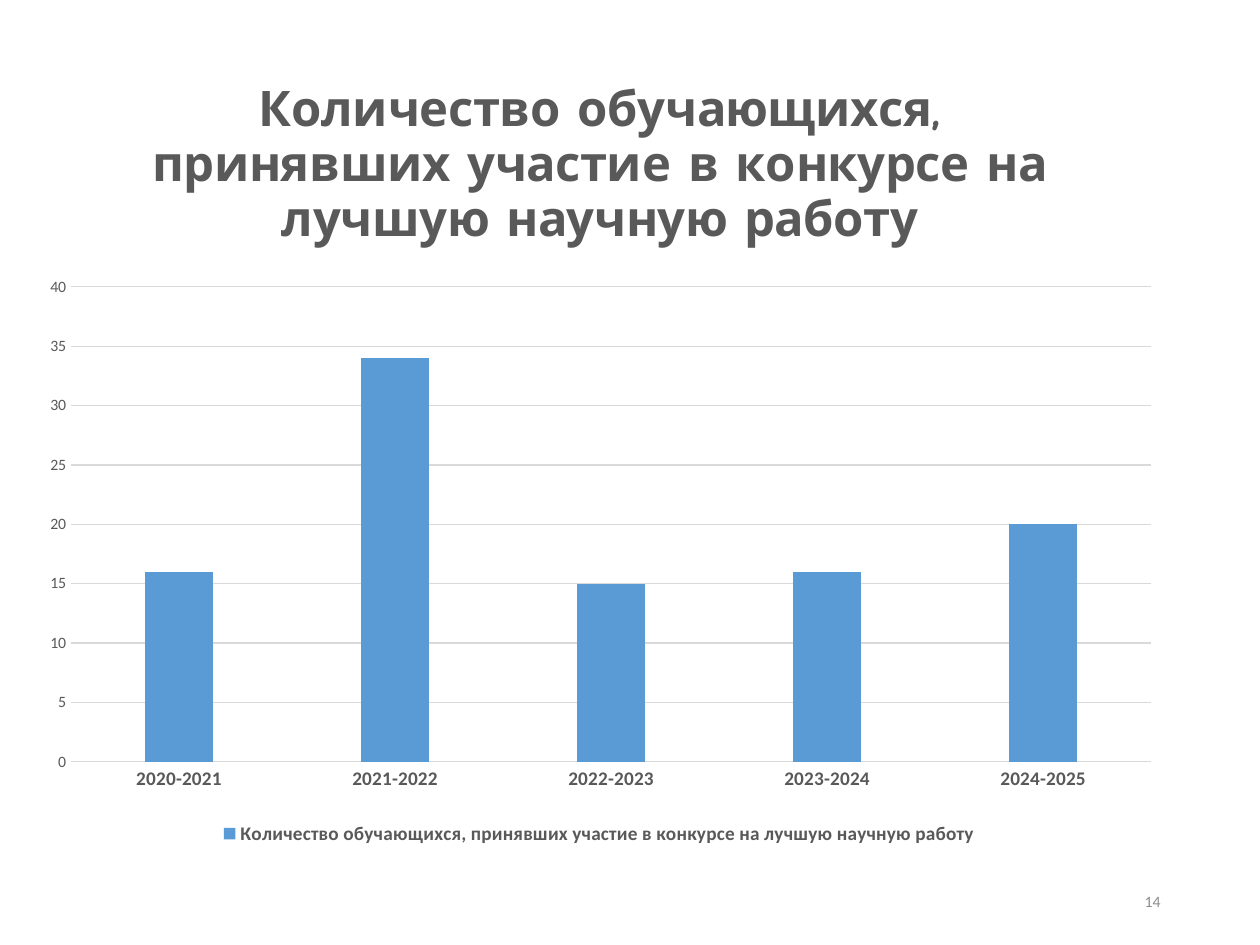
"""Build a slide with a column chart of students entering the research paper contest."""
from dataclasses import dataclass

from pptx import Presentation
from pptx.chart.data import CategoryChartData
from pptx.dml.color import RGBColor
from pptx.enum.chart import XL_CHART_TYPE as ChartType, XL_LEGEND_POSITION as LegendPosition
from pptx.enum.chart import XL_TICK_MARK as TickMark
from pptx.enum.text import MSO_ANCHOR as Anchor, PP_ALIGN as Align
from pptx.oxml import parse_xml
from pptx.oxml.ns import nsdecls
from pptx.util import Inches, Pt


@dataclass(frozen=True)
class Theme:
    body_font: str = "Calibri"
    title_font: str = "Comic Neue"
    text: str = "595959"
    muted: str = "8C8C8C"
    grid: str = "D9D9D9"
    bar: str = "5B9BD5"
    title_size: int = 28
    label_size: int = 11
    small_size: int = 9
    line_width: float = 0.75


theme = Theme()


def style_font(font, size, color=theme.text, bold=False, name=theme.body_font):
    font.name, font.size, font.bold = name, Pt(size), bold
    font.color.rgb = RGBColor.from_string(color)


def style_line(line):
    line.color.rgb = RGBColor.from_string(theme.grid)
    line.width = Pt(theme.line_width)


presentation = Presentation()
presentation.slide_width, presentation.slide_height = Inches(10), Inches(7.5)
slide = presentation.slides.add_slide(presentation.slide_layouts[6])

heading = "Количество обучающихся, принявших участие в конкурсе на лучшую научную работу"
data = CategoryChartData()
data.categories = [f"{year}-{year + 1}" for year in range(2020, 2025)]
data.add_series(heading, (16, 34, 15, 16, 20))
chart = slide.shapes.add_chart(
    ChartType.COLUMN_CLUSTERED, Inches(0.2), Inches(0.36), Inches(9.12), Inches(6.39), data
).chart
style_font(chart.font, theme.small_size)

title = chart.chart_title
title.include_in_layout = False
title.text_frame.text = heading
style_font(title.text_frame.paragraphs[0].font, theme.title_size, bold=True, name=theme.title_font)

chart.has_legend = True
chart.legend.position = LegendPosition.BOTTOM
chart.legend.include_in_layout = False
style_font(chart.legend.font, theme.label_size, bold=True)

category_axis, value_axis = chart.category_axis, chart.value_axis
for axis in (category_axis, value_axis):
    axis.major_tick_mark = axis.minor_tick_mark = TickMark.NONE
style_font(category_axis.tick_labels.font, theme.label_size, bold=True)
style_line(category_axis.format.line)
style_font(value_axis.tick_labels.font, theme.small_size)
style_line(value_axis.major_gridlines.format.line)
value_axis.format.line.fill.background()
value_axis.minimum_scale, value_axis.maximum_scale, value_axis.major_unit = 0, 40, 5

plot = chart.plots[0]
plot.gap_width, plot.overlap, plot.vary_by_categories = 219, -27, False
bar_fill = plot.series[0].format.fill
bar_fill.solid()
bar_fill.fore_color.rgb = RGBColor.from_string(theme.bar)

plot_area = chart.element.chart.plotArea
for layout in plot_area.xpath("c:layout"):
    plot_area.remove(layout)
plot_area.insert(0, parse_xml(
    f'<c:layout {nsdecls("c")}><c:manualLayout><c:layoutTarget val="inner"/>'
    '<c:xMode val="edge"/><c:yMode val="edge"/><c:x val="0.04"/><c:y val="0.3"/>'
    '<c:w val="0.94"/><c:h val="0.59"/></c:manualLayout></c:layout>'
))

number_box = slide.shapes.add_textbox(Inches(7.06), Inches(6.95), Inches(2.25), Inches(0.4))
number_frame = number_box.text_frame
number_frame.word_wrap = True
number_frame.vertical_anchor = Anchor.MIDDLE
paragraph = number_frame.paragraphs[0]
paragraph.text = "14"
paragraph.alignment = Align.RIGHT
style_font(paragraph.font, theme.small_size, theme.muted)

presentation.save("out.pptx")
